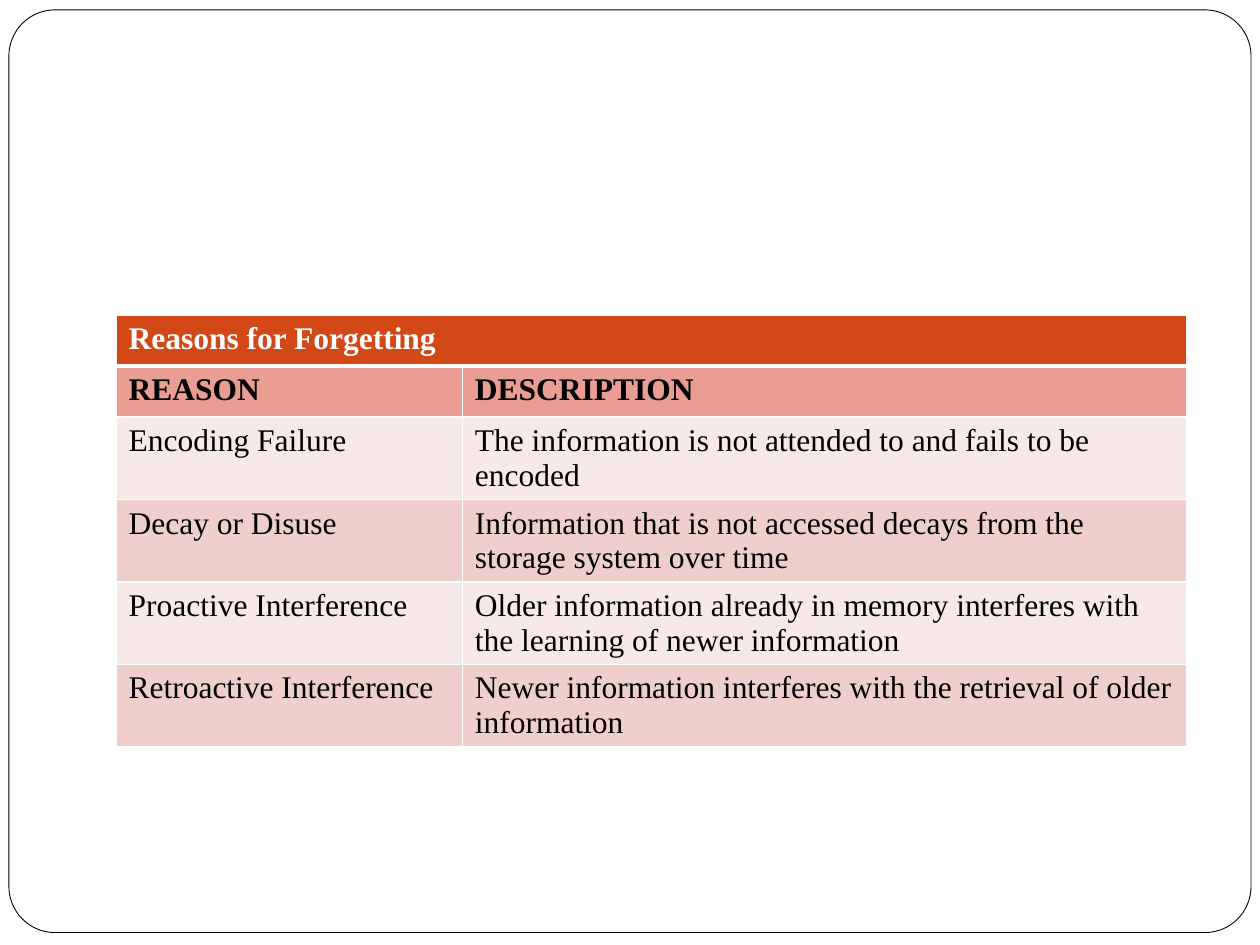
import lxml.etree
import pptx
import pptx.dml.color
import pptx.enum.shapes
import pptx.oxml.ns
import pptx.util

Cm = pptx.util.Cm
Pt = pptx.util.Pt
RGBColor = pptx.dml.color.RGBColor

WHITE = RGBColor(0xFF, 0xFF, 0xFF)
BLACK = RGBColor(0x00, 0x00, 0x00)
ORANGE = RGBColor(0xD3, 0x48, 0x17)
SALMON = RGBColor(0xE9, 0x9D, 0x93)
PALE = RGBColor(0xF7, 0xE9, 0xE8)
PINK = RGBColor(0xEF, 0xCF, 0xCC)

TITLE = "Reasons for Forgetting"
HEADINGS = ("REASON", "DESCRIPTION")
REASONS = [
    ("Encoding Failure", "The information is not attended to and fails to be encoded"),
    ("Decay or Disuse", "Information that is not accessed decays from the storage system over time"),
    ("Proactive Interference",
     "Older information already in memory interferes with the learning of newer information"),
    ("Retroactive Interference",
     "Newer information interferes with the retrieval of older information"),
]


class SlideBuilder:
    font = "Times New Roman"
    size = Pt(18)

    def __init__(self, prs):
        self.s = prs.slides.add_slide(prs.slide_layouts[6])

    def frame(self, left, top, width, height):
        sp = self.s.shapes.add_shape(
            pptx.enum.shapes.MSO_SHAPE.ROUNDED_RECTANGLE,
            Cm(left), Cm(top), Cm(width), Cm(height))
        sp.adjustments[0] = 0.05
        sp.shadow.inherit = False
        sp.fill.solid()
        sp.fill.fore_color.rgb = WHITE
        sp.line.color.rgb = BLACK
        sp.line.width = Pt(0.5)

    def table(self, left, top, widths, heights):
        tbl = self.s.shapes.add_table(
            len(heights), len(widths), Cm(left), Cm(top),
            Cm(sum(widths)), Cm(sum(heights))).table
        tbl.first_row = False
        tbl.horz_banding = False
        for column, width in zip(tbl.columns, widths):
            column.width = Cm(width)
        for row, height in zip(tbl.rows, heights):
            row.height = Cm(height)
        return tbl

    def border(self, cell, side, width):
        qn = pptx.oxml.ns.qn
        tc_pr = cell._tc.get_or_add_tcPr()
        ln = lxml.etree.SubElement(tc_pr, qn(f"a:ln{side}"), w=str(Pt(width)))
        fill = lxml.etree.SubElement(ln, qn("a:solidFill"))
        lxml.etree.SubElement(fill, qn("a:srgbClr"), val=str(WHITE))

    def cell(self, cell, text, fill, color=BLACK, bold=False, top=1, bottom=1):
        for side, width in (("L", 1), ("R", 1), ("T", top), ("B", bottom)):
            self.border(cell, side, width)
        cell.fill.solid()
        cell.fill.fore_color.rgb = fill
        p = cell.text_frame.paragraphs[0]
        p.text = text
        p.font.name = self.font
        p.font.size = self.size
        p.font.bold = bold
        p.font.color.rgb = color


def main():
    prs = pptx.Presentation()
    prs.slide_width = Cm(25.4)
    prs.slide_height = Cm(19.05)
    slide = SlideBuilder(prs)
    slide.frame(0.18, 0.2, 25.04, 18.6)

    tbl = slide.table(2.34, 6.35, [6.98, 14.6], [1.03] * 2 + [1.66] * len(REASONS))
    tbl.cell(0, 0).merge(tbl.cell(0, 1))
    for col, text in enumerate((TITLE, "")):
        slide.cell(tbl.cell(0, col), text, ORANGE, WHITE, bold=True, bottom=3)
    for col, text in enumerate(HEADINGS):
        slide.cell(tbl.cell(1, col), text, SALMON, bold=True, top=3)
    for row, texts in enumerate(REASONS):
        for col, text in enumerate(texts):
            slide.cell(tbl.cell(row + 2, col), text, (PALE, PINK)[row % 2])

    prs.save("out.pptx")


if __name__ == "__main__":
    main()
